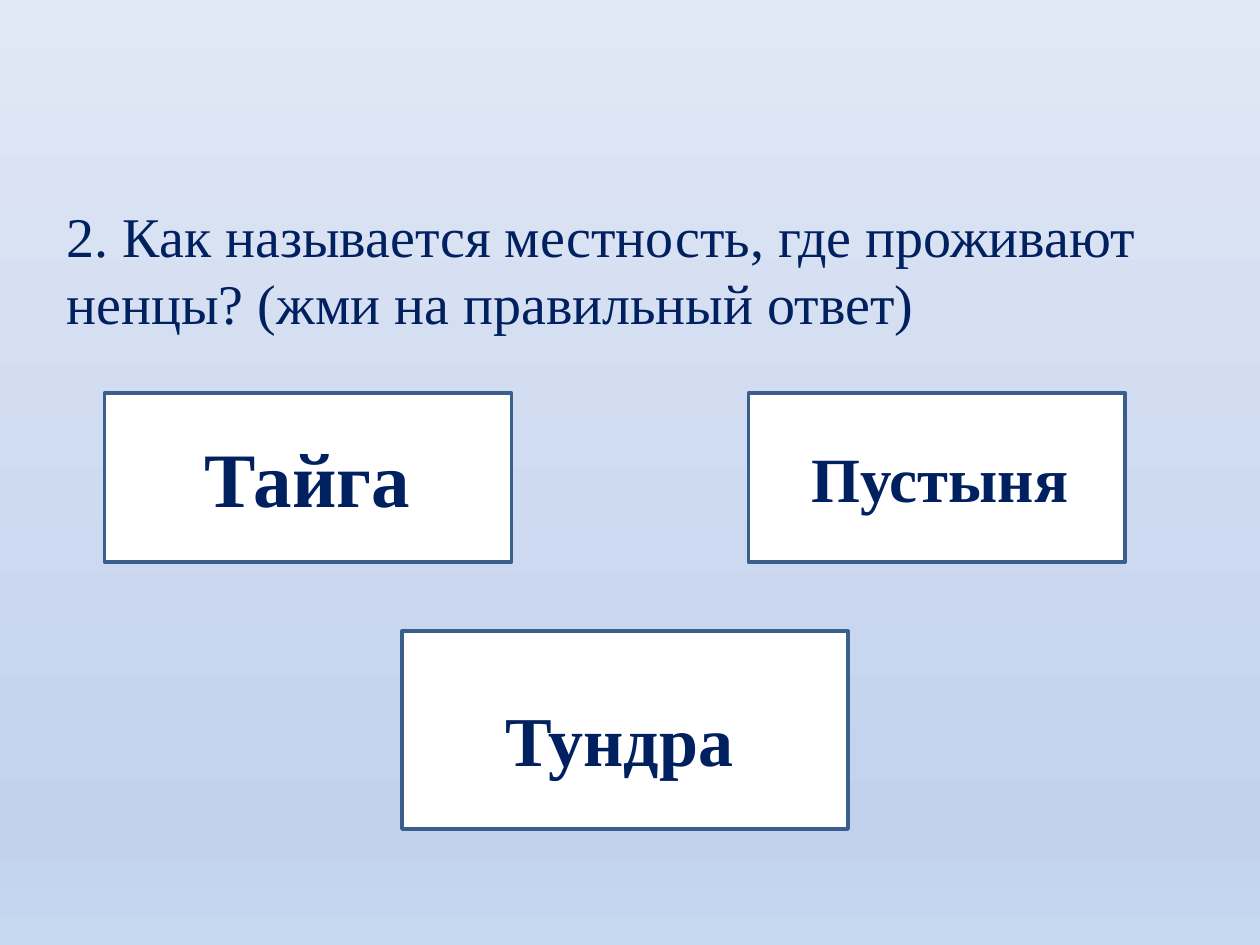
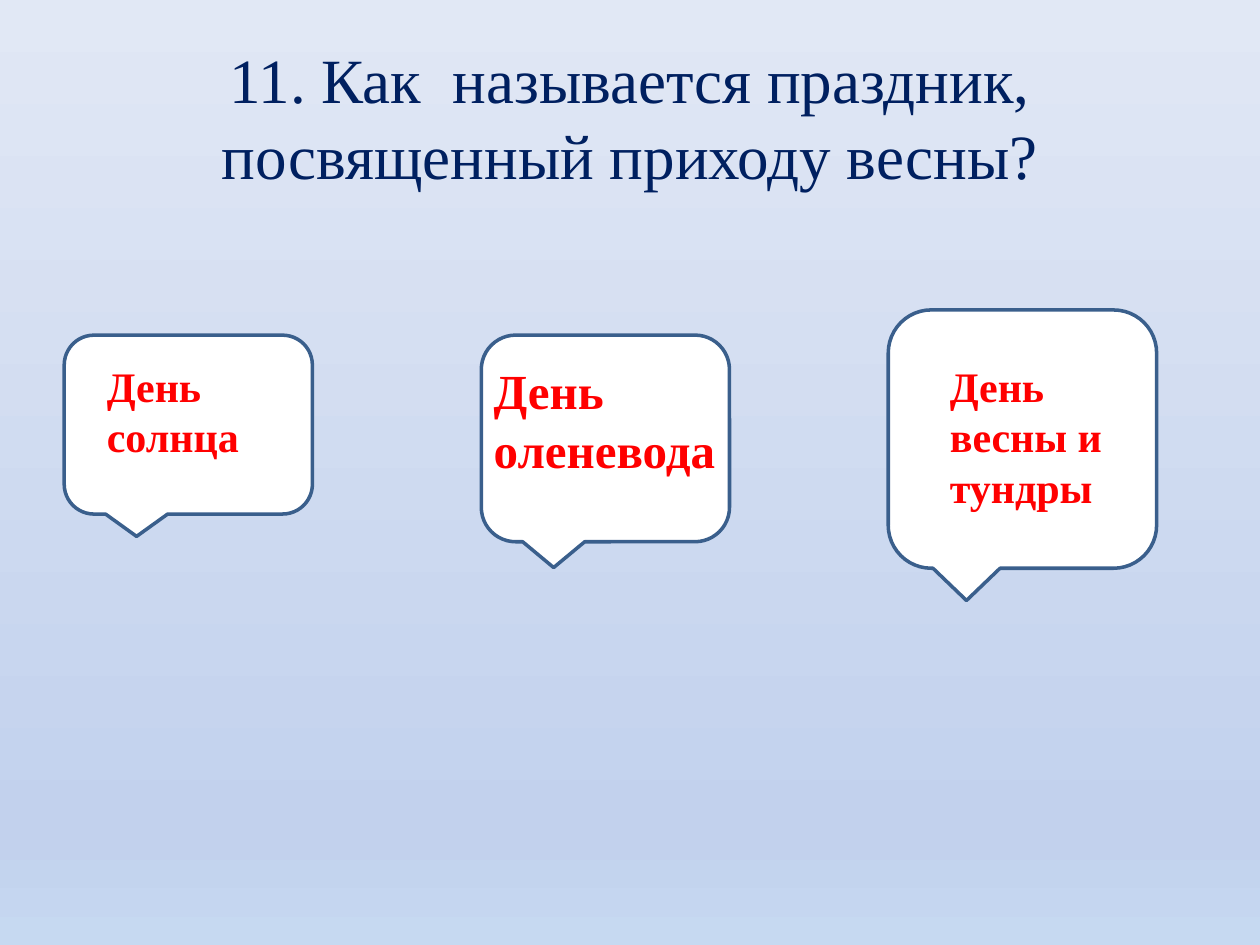
from dataclasses import dataclass

from lxml import etree
from pptx import Presentation
from pptx import util as u
from pptx.dml.color import RGBColor
from pptx.enum import shapes, text
from pptx.oxml.ns import qn


@dataclass(frozen=True)
class Theme:
    font: str = "Times New Roman"
    navy: str = "002060"
    red: str = "FF0000"
    card: str = "FFFFFF"
    outline: str = "3A5F8C"
    outline_width: int = 2
    backdrop: tuple = ((0, "C6D9F1"), (12, "C2D1ED"), (100, "E1E8F5"))
    backdrop_angle: int = 270
    question: int = 32
    title: int = 36


THEME = Theme()
COLUMNS, ROWS = 100, 75
CELL = u.Inches(0.1)

# Every box is (column, row, columns wide, rows high).
QUIZ = [
    {
        "question": "2. Как называется местность, где проживают ненцы? (жми на правильный ответ)",
        "box": (4.3, 15.5, 90.7, 51.5),
        "format": {"size": THEME.question, "space_before": THEME.question * 0.2},
        "card": shapes.MSO_SHAPE.FLOWCHART_PROCESS,
        "answer_format": {"color": THEME.navy, "align": text.PP_ALIGN.CENTER},
        "answers": [
            ("Тайга", 44, (8.3, 31.2, 32.3, 13.4), (10.6, 33.7, 27.6, 8.4)),
            ("Пустыня", 36, (59.4, 31.2, 29.9, 13.4), (62, 34.4, 25.2, 7.1)),
            ("Тундра", 40, (31.9, 50.1, 35.4, 15.7), (35, 54.8, 28.3, 7.7)),
        ],
    },
    {
        "question": "11. Как  называется праздник, посвященный приходу весны?",
        "box": (5, 3, 90, 12.5),
        "format": {
            "size": THEME.title,
            "align": text.PP_ALIGN.CENTER,
            "anchor": text.MSO_ANCHOR.MIDDLE,
        },
        "card": shapes.MSO_SHAPE.ROUNDED_RECTANGULAR_CALLOUT,
        "answer_format": {"color": THEME.red},
        "answers": [
            ("День солнца", 24, (5.1, 26.6, 19.7, 14.2), (7.5, 28.1, 13.4, 9.1)),
            ("День оленевода", 28, (38.2, 26.6, 19.7, 16.4), (38.2, 28.1, 21.3, 10.4)),
            ("День весны и тундры", 24, (70.5, 24.6, 21.3, 20.5), (74.4, 28.1, 17.3, 13.1)),
        ],
    },
]


def place(box):
    return [u.Emu(round(length * CELL)) for length in box]


def paint_background(slide):
    fill = slide.background.fill
    fill.gradient()
    stops = slide.element.find(".//" + qn("a:gsLst"))
    for stop in list(stops):
        stops.remove(stop)
    for position, color in THEME.backdrop:
        stop = etree.SubElement(stops, qn("a:gs"), pos=str(position * 1000))
        etree.SubElement(stop, qn("a:srgbClr"), val=color)
    fill.gradient_angle = 360 - THEME.backdrop_angle


def add_text(slide, wording, box, size, color=THEME.navy, bold=False,
             align=text.PP_ALIGN.LEFT, anchor=text.MSO_ANCHOR.TOP,
             space_before=0, grow=False):
    frame = slide.shapes.add_textbox(*place(box)).text_frame
    frame.word_wrap = True
    frame.vertical_anchor = anchor
    if grow:
        frame.auto_size = text.MSO_AUTO_SIZE.SHAPE_TO_FIT_TEXT
    paragraph = frame.paragraphs[0]
    paragraph.alignment = align
    paragraph.space_before = u.Pt(space_before)
    run = paragraph.add_run()
    run.text = wording
    run.font.name = THEME.font
    run.font.size = u.Pt(size)
    run.font.bold = bold
    run.font.color.rgb = RGBColor.from_string(color)


def add_card(slide, kind, box):
    card = slide.shapes.add_shape(kind, *place(box))
    card.shadow.inherit = False
    card.fill.solid()
    card.fill.fore_color.rgb = RGBColor.from_string(THEME.card)
    card.line.color.rgb = RGBColor.from_string(THEME.outline)
    card.line.width = u.Pt(THEME.outline_width)


def add_quiz_slide(presentation, quiz):
    slide = presentation.slides.add_slide(presentation.slide_layouts[6])
    paint_background(slide)
    add_text(slide, quiz["question"], quiz["box"], **quiz["format"])
    for wording, size, card_box, label_box in quiz["answers"]:
        add_card(slide, quiz["card"], card_box)
        add_text(slide, wording, label_box, size=size, bold=True, grow=True,
                 **quiz["answer_format"])


def main():
    presentation = Presentation()
    presentation.slide_width = COLUMNS * CELL
    presentation.slide_height = ROWS * CELL
    for quiz in QUIZ:
        add_quiz_slide(presentation, quiz)
    presentation.save("out.pptx")


if __name__ == "__main__":
    main()
